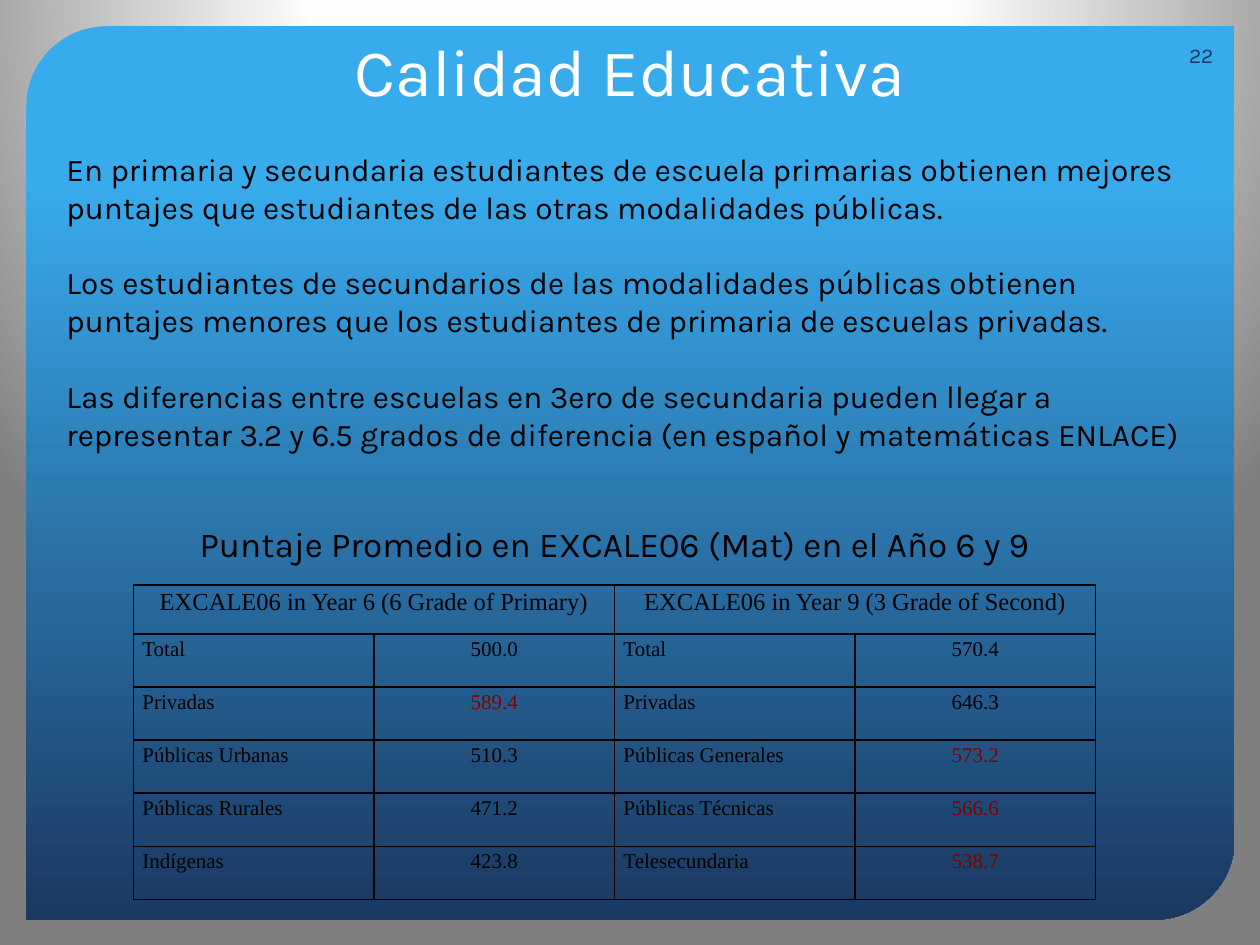
from dataclasses import dataclass

from lxml import etree
from pptx import Presentation
from pptx.dml.color import RGBColor
from pptx.enum.shapes import MSO_SHAPE
from pptx.enum.text import MSO_ANCHOR, PP_ALIGN
from pptx.oxml import parse_xml
from pptx.oxml.ns import qn
from pptx.util import Cm, Pt

LEFT, CENTER, RIGHT = PP_ALIGN.LEFT, PP_ALIGN.CENTER, PP_ALIGN.RIGHT
TOP, MIDDLE, BOTTOM = MSO_ANCHOR.TOP, MSO_ANCHOR.MIDDLE, MSO_ANCHOR.BOTTOM
DIAGONAL = MSO_SHAPE.ROUND_2_DIAG_RECTANGLE
SANS, SERIF = "Karla", "Times New Roman"
BLACK, WHITE, NAVY, SKY, MAROON = "000000", "FFFFFF", "1B3861", "38ABED", "800000"
A_NS = "http://schemas.openxmlformats.org/drawingml/2006/main"


@dataclass
class TextBox:
    box: tuple[float, float, float, float]
    paragraphs: list[str]
    size: float
    color: str = BLACK
    align: PP_ALIGN = LEFT
    anchor: MSO_ANCHOR = TOP
    gap: float = 0


@dataclass
class Score:
    school: str
    points: str
    color: str = BLACK


TEXTS = [
    TextBox((1.27, 0.43, 22.86, 1.9), ["Calidad Educativa"], 38, WHITE, CENTER, BOTTOM),
    TextBox((23.34, 0.61, 1.37, 1.02), ["22"], 12, NAVY, RIGHT, MIDDLE),
    TextBox((1.09, 2.9, 23.19, 6.4), [
        "En primaria y secundaria estudiantes de escuela primarias obtienen mejores "
        "puntajes que estudiantes de las otras modalidades públicas.",
        "Los estudiantes de secundarios de las modalidades públicas obtienen "
        "puntajes menores que los estudiantes de primaria de escuelas privadas.",
        "Las diferencias entre escuelas en 3ero de secundaria pueden llegar a "
        "representar 3.2 y 6.5 grados de diferencia (en español y matemáticas ENLACE)",
    ], 18, gap=21.6),
    TextBox((2.49, 10.41, 19.81, 1.12),
            ["Puntaje Promedio en EXCALE06 (Mat) en el Año 6 y 9"], 20, align=CENTER),
]

SCORES = {
    "EXCALE06 in Year 6 (6 Grade of Primary)": [
        Score("Total", "500.0"),
        Score("Privadas", "589.4", MAROON),
        Score("Públicas Urbanas", "510.3"),
        Score("Públicas Rurales", "471.2"),
        Score("Indígenas", "423.8"),
    ],
    "EXCALE06 in Year 9 (3 Grade of Second)": [
        Score("Total", "570.4"),
        Score("Privadas", "646.3"),
        Score("Públicas Generales", "573.2", MAROON),
        Score("Públicas Técnicas", "566.6", MAROON),
        Score("Telesecundaria", "538.7", MAROON),
    ],
}


def rgb(color: str) -> RGBColor:
    return RGBColor.from_string(color)


def set_attrs(obj, values: dict) -> None:
    for name, value in values.items():
        setattr(obj, name, value)


def write(p, text: str, font: str, size: float, color: str, align: PP_ALIGN) -> None:
    p.alignment = align
    r = p.add_run()
    r.text = text
    set_attrs(r.font, {"name": font, "size": Pt(size)})
    r.font.color.rgb = rgb(color)


def add_background(s) -> None:
    """Fill the slide with a circular gradient centred above its top edge."""
    s.background.fill.solid()
    bg_pr = s.element.find(".//" + qn("p:bgPr"))
    stops = "".join(
        f'<a:gs pos="{pos * 1000}"><a:srgbClr val="{color}"/></a:gs>'
        for pos, color in [(0, WHITE), (40, "FEFEFE"), (100, "7F7F7F")])
    bg_pr.replace(bg_pr[0], parse_xml(
        f'<a:gradFill xmlns:a="{A_NS}" rotWithShape="1"><a:gsLst>{stops}</a:gsLst>'
        '<a:path path="circle"><a:fillToRect l="50000" t="-80000" r="50000" b="180000"/>'
        '</a:path></a:gradFill>'))


def add_panel(s) -> None:
    sp = s.shapes.add_shape(DIAGONAL, Cm(0.53), Cm(0.53), Cm(24.36), Cm(18.01))
    sp.shadow.inherit = False
    sp.adjustments[0] = 0.09
    sp.adjustments[1] = 0
    sp.line.fill.background()
    sp.fill.gradient()
    sp.fill.gradient_angle = 270
    for stop, (pos, color) in zip(sp.fill.gradient_stops, [(0.17, SKY), (1, NAVY)]):
        stop.position = pos
        stop.color.rgb = rgb(color)


def add_text(s, text: TextBox) -> None:
    tf = s.shapes.add_textbox(*map(Cm, text.box)).text_frame
    set_attrs(tf, {"word_wrap": True, "vertical_anchor": text.anchor})
    for i, line in enumerate(text.paragraphs):
        p = tf.paragraphs[0] if i == 0 else tf.add_paragraph()
        if i:
            p.space_before = Pt(text.gap)
        write(p, line, SANS, text.size, text.color, text.align)


def add_borders(cell) -> None:
    tc_pr = cell._tc.get_or_add_tcPr()
    for side in ("lnL", "lnR", "lnT", "lnB"):
        ln = etree.SubElement(tc_pr, qn("a:" + side), w=str(Pt(1)))
        fill = etree.SubElement(ln, qn("a:solidFill"))
        etree.SubElement(fill, qn("a:srgbClr"), val=BLACK)


def fill_cell(cell, text: str, size: float, color: str, align: PP_ALIGN) -> None:
    p = cell.text_frame.paragraphs[0]
    p.line_spacing = 1.15
    write(p, text, SERIF, size, color, align)


def add_scores(s) -> None:
    n_rows = 1 + max(map(len, SCORES.values()))
    n_cols = 2 * len(SCORES)
    table = s.shapes.add_table(n_rows, n_cols, Cm(2.69), Cm(11.79),
                               Cm(19.4), Cm(6.34)).table
    set_attrs(table, {"first_row": False, "horz_banding": False})
    for col in table.columns:
        col.width = Cm(4.85)
    for i, row in enumerate(table.rows):
        row.height = Cm(1.07 if i else 0.99)
    for cell in table.iter_cells():
        set_attrs(cell, {"margin_left": Cm(0.18), "margin_right": Cm(0.18),
                         "margin_top": 0, "margin_bottom": 0})
        add_borders(cell)
        cell.fill.background()
    for group, (heading, scores) in enumerate(SCORES.items()):
        col = 2 * group
        table.cell(0, col).merge(table.cell(0, col + 1))
        fill_cell(table.cell(0, col), heading, 14, BLACK, CENTER)
        for row, score in enumerate(scores, 1):
            fill_cell(table.cell(row, col), score.school, 12, BLACK, LEFT)
            fill_cell(table.cell(row, col + 1), score.points, 12, score.color, CENTER)


def main() -> None:
    prs = Presentation()
    set_attrs(prs, {"slide_width": Cm(25.4), "slide_height": Cm(19.05)})
    s = prs.slides.add_slide(prs.slide_layouts[6])
    add_background(s)
    add_panel(s)
    add_scores(s)
    for text in TEXTS:
        add_text(s, text)
    prs.save("out.pptx")


if __name__ == "__main__":
    main()
